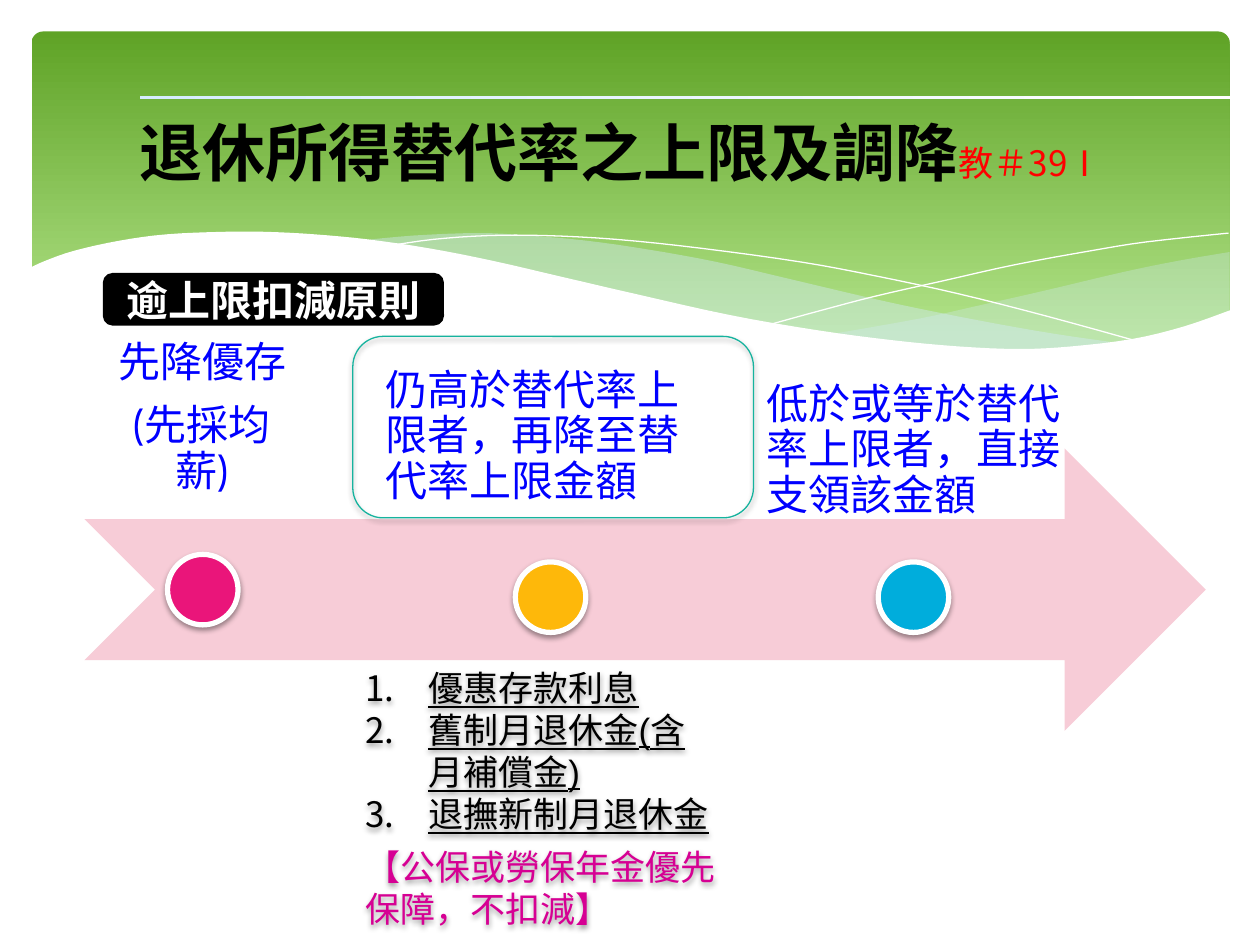
from lxml import etree
from pptx import Presentation
from pptx.dml.color import RGBColor
from pptx.enum.shapes import MSO_SHAPE as SHAPE
from pptx.enum.text import MSO_ANCHOR as ANCHOR, PP_ALIGN as ALIGN
from pptx.oxml.ns import qn
from pptx.util import Inches, Pt

BLACK = RGBColor(0x00, 0x00, 0x00)
WHITE = RGBColor(0xFF, 0xFF, 0xFF)
RED = RGBColor(0xFF, 0x00, 0x00)
BLUE = RGBColor(0x00, 0x00, 0xFF)
MAGENTA = RGBColor(0xD6, 0x00, 0x93)
GREEN = RGBColor(0x5F, 0xA3, 0x26)
LIGHT_GREEN = RGBColor(0xB2, 0xE3, 0x89)
SKY = RGBColor(0xD6, 0xEC, 0xFF)
ROSE = RGBColor(0xF7, 0xCC, 0xD7)
PINK = RGBColor(0xEA, 0x15, 0x7A)
AMBER = RGBColor(0xFE, 0xB8, 0x0A)
CYAN = RGBColor(0x00, 0xAD, 0xDC)
TEAL = RGBColor(0x16, 0xB3, 0x9E)


def curve(points, steps=4):
    """Smooth a list of points with a Catmull-Rom spline."""
    pts = [points[0], *points, points[-1]]
    out = []
    for a, b, c, d in zip(pts, pts[1:], pts[2:], pts[3:]):
        for t in (i / steps for i in range(steps)):
            out.append(tuple(
                q + t / 2 * (r - p + t * (2 * p - 5 * q + 4 * r - u
                                          + t * (3 * (q - r) + u - p)))
                for p, q, r, u in zip(a, b, c, d)))
    return out + [points[-1]]


class Deck:
    FONT, EA_FONT = "Cabin", "Noto Sans CJK TC"

    def __init__(self):
        self.prs = Presentation()
        self.prs.slide_width, self.prs.slide_height = Inches(10), Inches(7.5)
        self.s = self.prs.slides.add_slide(self.prs.slide_layouts[6])

    def paint(self, sp, fill=None, line=None, width=0.75, alpha=None):
        sp.shadow.inherit = False
        if isinstance(fill, dict):
            sp.fill.gradient()
            sp.fill.gradient_angle = fill["angle"]
            for stop, (pos, color) in zip(sp.fill.gradient_stops, fill["stops"]):
                stop.position, stop.color.rgb = pos, color
        elif fill is None:
            sp.fill.background()
        else:
            sp.fill.solid()
            sp.fill.fore_color.rgb = fill
        if alpha:
            clr = sp.element.spPr.find(".//" + qn("a:srgbClr"))
            etree.SubElement(clr, qn("a:alpha"), val=str(alpha * 1000))
        if line is None:
            sp.line.fill.background()
        else:
            sp.line.color.rgb, sp.line.width = line, Pt(width)
        return sp

    def shape(self, kind, box, adj=None, **style):
        sp = self.s.shapes.add_shape(kind, *map(Inches, box))
        if adj is not None:
            sp.adjustments[0] = adj
        return self.paint(sp, **style)

    def free(self, points, closed=True, **style):
        pts = [(Inches(x), Inches(y)) for x, y in points]
        builder = self.s.shapes.build_freeform(*pts[0])
        builder.add_line_segments(pts[1:], close=closed)
        return self.paint(builder.convert_to_shape(), **style)

    def shadow(self, sp):
        sp.shadow.inherit = False
        effects = sp.element.spPr.find(qn("a:effectLst"))
        outer = etree.SubElement(effects, qn("a:outerShdw"), blurRad=str(Pt(3.1)),
                                 dist=str(Pt(1.6)), dir="5400000", rotWithShape="0")
        clr = etree.SubElement(outer, qn("a:srgbClr"), val="000000")
        etree.SubElement(clr, qn("a:alpha"), val="38000")

    def text(self, box, paragraphs, inset=None, anchor=ANCHOR.TOP):
        sp = self.s.shapes.add_textbox(*map(Inches, box))
        self.fill_text(sp, paragraphs, inset, anchor)
        return sp

    def fill_text(self, sp, paragraphs, inset=None, anchor=ANCHOR.MIDDLE):
        """Each paragraph is (format, runs, numbered); each run (text, format)."""
        tf = sp.text_frame
        tf.word_wrap, tf.vertical_anchor = True, anchor
        if inset is not None:
            for side in ("left", "top", "right", "bottom"):
                setattr(tf, f"margin_{side}", Inches(inset))
        for i, (p_format, runs, numbered) in enumerate(paragraphs):
            p = tf.add_paragraph() if i else tf.paragraphs[0]
            if numbered:
                pPr = p._p.get_or_add_pPr()
                pPr.set("marL", str(Inches(0.5)))
                pPr.set("indent", str(Inches(-0.5)))
                etree.SubElement(pPr, qn("a:buAutoNum"), type="arabicPeriod")
            for key, value in p_format.items():
                setattr(p, key, value)
            for words, r_format in runs:
                r = p.add_run()
                r.text = words
                values = {"name": self.FONT, **r_format}
                r.font.color.rgb = values.pop("color")
                for key, value in values.items():
                    setattr(r.font, key, value)
                etree.SubElement(r._r.get_or_add_rPr(), qn("a:ea"),
                                 typeface=self.EA_FONT)


def main():
    deck = Deck()

    # Green banner
    deck.shape(SHAPE.ROUNDED_RECTANGLE, (0.25, 0.25, 9.51, 2.7), adj=0.034,
               fill={"angle": 270, "stops": [(0, GREEN), (0.9, LIGHT_GREEN)]})

    # Translucent waves
    deck.free(curve([(9.76, 2), (9.35, 2.07), (8.91, 2.16), (8.32, 2.3),
                     (7.79, 2.42), (7.29, 2.53), (6.61, 2.65)])
              + curve([(6.61, 2.65), (7.05, 2.71), (7.57, 2.76), (8.03, 2.78),
                       (8.54, 2.76), (8.97, 2.7), (9.35, 2.62), (9.76, 2.47)]),
              fill=SKY, alpha=29)
    deck.free(curve([(8.93, 2.73), (8.37, 2.65), (7.75, 2.54), (7.06, 2.4),
                     (6.29, 2.22), (5.69, 2.08), (5.14, 1.98), (4.65, 1.91),
                     (4.2, 1.87), (3.8, 1.85), (3.28, 1.87), (2.86, 1.91)])
              + curve([(2.86, 1.91), (3.42, 1.99), (4.04, 2.11), (4.49, 2.22),
                       (5.3, 2.4), (6.01, 2.55), (6.65, 2.66), (7.22, 2.74),
                       (7.73, 2.77), (8.18, 2.78), (8.57, 2.77), (8.93, 2.73)]),
              fill=SKY, alpha=40)

    # Hairline waves
    for points in (
            [(3.09, 1.95), (3.44, 1.9), (3.87, 1.87), (4.33, 1.87), (4.89, 1.9),
             (5.56, 1.97), (6.36, 2.08), (6.95, 2.19), (7.6, 2.33),
             (8.31, 2.51), (9.07, 2.72)],
            [(6.13, 2.57), (6.53, 2.46), (6.95, 2.35), (7.48, 2.23), (8.06, 2.1),
             (8.66, 1.99), (9.1, 1.92), (9.75, 1.85)]):
        deck.free(curve(points), closed=False, line=WHITE, width=0)

    # White lower edge of the banner
    deck.free(curve([(9.77, 2.46), (9.4, 2.59), (8.99, 2.69), (8.5, 2.75),
                     (8.09, 2.77), (7.61, 2.75), (7.08, 2.7), (6.48, 2.62),
                     (5.79, 2.5), (5.03, 2.33), (4.47, 2.2), (3.91, 2.07),
                     (3.4, 1.97), (2.92, 1.9), (2.5, 1.86), (2.11, 1.84),
                     (1.77, 1.84), (1.32, 1.86), (0.95, 1.91), (0.59, 1.99),
                     (0.36, 2.07), (0.23, 2.13)]) + [(0.23, 3.29), (9.77, 3.29)],
              fill=WHITE)

    # Title and its rule
    deck.shape(SHAPE.RECTANGLE, (1.11, 0.76, 8.77, 0.03),
               fill={"angle": 0, "stops": [(0, SKY), (1, WHITE)]})
    note = {"size": Pt(20), "color": RED}
    deck.text((0.43, 0.52, 9, 1.37), [({"alignment": ALIGN.CENTER}, [
        ("退休所得替代率之上限及調降", {"size": Pt(36), "bold": True, "color": BLACK}),
        ("教＃39", {**note, "name": "Noto Sans CJK SC"}),
        ("Ⅰ", {**note, "name": "Noto Sans CJK TC"})], False)],
        anchor=ANCHOR.MIDDLE)

    # Timeline arrow, steps and markers
    deck.shape(SHAPE.NOTCHED_RIGHT_ARROW, (0.67, 3.56, 8.9, 2.24), fill=ROSE)
    deck.shadow(deck.shape(SHAPE.ROUNDED_RECTANGLE, (2.8, 2.67, 3.18, 1.44),
                           line=TEAL))
    steps = [
        ((0.67, 1.88, 1.87, 2.24), ["先降優存", "(先採均薪)"],
         ALIGN.CENTER, ANCHOR.BOTTOM, (1.33, 4.4), PINK),
        ((2.87, 2.74, 3.04, 1.3), ["仍高於替代率上限者，再降至替代率上限金額"],
         ALIGN.LEFT, ANCHOR.TOP, (4.09, 4.46), AMBER),
        ((5.89, 2.63, 2.77, 1.68), ["低於或等於替代率上限者，直接支領該金額"],
         ALIGN.LEFT, ANCHOR.BOTTOM, (6.97, 4.46), CYAN),
    ]
    for box, lines, align, anchor, marker, color in steps:
        p_format = {"alignment": align, "line_spacing": 0.9, "space_after": Pt(10)}
        deck.text(box, [(p_format, [(line, {"size": Pt(24), "color": BLUE})], False)
                        for line in lines], inset=0.19, anchor=anchor)
        deck.shadow(deck.shape(SHAPE.OVAL, (*marker, 0.56, 0.56), fill=color,
                               line=WHITE, width=3))

    # Order of deduction
    body = {"name": "Arial", "size": Pt(20)}
    items = [({}, [(words, {**body, "underline": True, "color": BLACK})], True)
             for words in ("優惠存款利息", "舊制月退休金(含月補償金)", "退撫新制月退休金")]
    remark = ({"space_before": Pt(6)},
              [("【公保或勞保年金優先保障，不扣減】", {**body, "color": MAGENTA})], False)
    deck.shadow(deck.text((2.8, 5.24, 2.99, 2.2), items + [remark]))

    # Section label
    label = deck.shape(SHAPE.ROUNDED_RECTANGLE, (0.83, 2.18, 2.68, 0.39),
                       fill=BLACK, line=BLACK, width=2)
    deck.fill_text(label, [({"alignment": ALIGN.CENTER}, [
        ("逾上限扣減原則", {"size": Pt(24), "bold": True, "color": WHITE})], False)])

    deck.prs.save("out.pptx")


if __name__ == "__main__":
    main()
